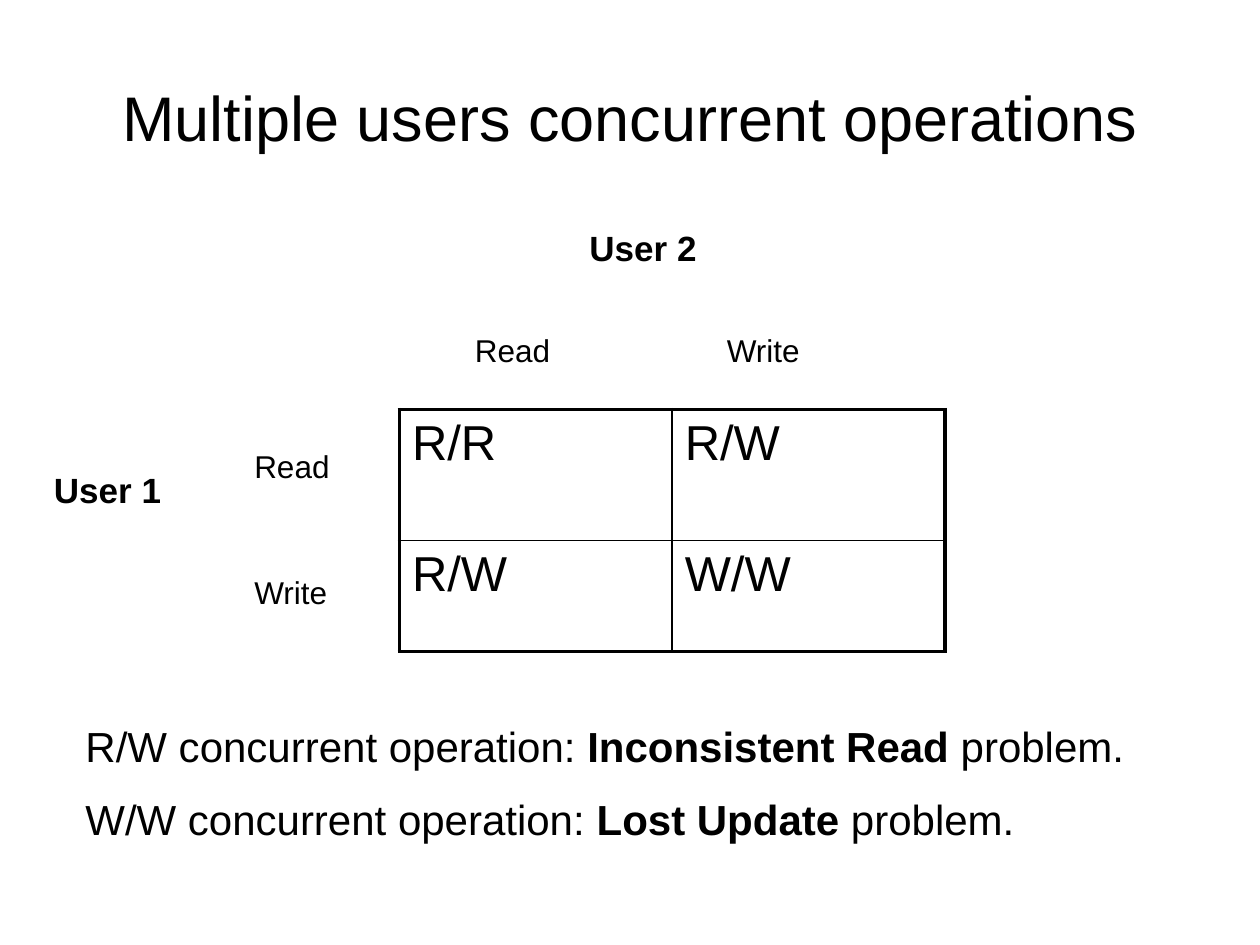
from lxml import etree
from pptx import Presentation
from pptx.dml.color import RGBColor
from pptx.enum.text import MSO_ANCHOR, MSO_AUTO_SIZE, PP_ALIGN
from pptx.oxml.ns import qn
from pptx.util import Inches, Pt

MIDDLE = MSO_ANCHOR.MIDDLE
GROW = MSO_AUTO_SIZE.SHAPE_TO_FIT_TEXT
CENTER = PP_ALIGN.CENTER
LEFT = PP_ALIGN.LEFT
COLORS = {"ink": "000000"}
FONT = "Arial"
THIN, THICK = 1, 2.25


def style(run, size, bold=False):
    """Set the font, size, weight and colour of a run."""
    font = run.font
    font.name = FONT
    font.size = Pt(size)
    font.bold = bold
    font.color.rgb = RGBColor.from_string(COLORS["ink"])


def add_title(slide, box, text):
    """Place the title placeholder in the box."""
    title = slide.shapes.title
    title.left, title.top, title.width, title.height = map(Inches, box)
    frame = title.text_frame
    frame.text = text
    frame.vertical_anchor = MIDDLE
    para = frame.paragraphs[0]
    para.alignment = CENTER
    style(para.runs[0], 36)


def add_text(slide, box, lines, size, gap=0):
    """Place lines made of (text, bold) parts in the box."""
    frame = slide.shapes.add_textbox(*map(Inches, box)).text_frame
    frame.word_wrap = True
    frame.auto_size = GROW
    for i, parts in enumerate(lines):
        para = frame.add_paragraph() if i else frame.paragraphs[0]
        para.alignment = LEFT
        if i:
            para.space_before = Pt(gap)
        for text, bold in parts:
            run = para.add_run()
            run.text = text
            style(run, size, bold)


def add_edges(cell, widths):
    """Draw the left, right, top and bottom edges of a cell."""
    props = cell._tc.get_or_add_tcPr()
    for i, (side, width) in enumerate(zip("LRTB", widths)):
        line = etree.Element(qn(f"a:ln{side}"), w=str(Pt(width)))
        fill = etree.SubElement(line, qn("a:solidFill"))
        etree.SubElement(fill, qn("a:srgbClr"), val=COLORS["ink"])
        props.insert(i, line)


def add_matrix(slide, box, rows, heights):
    """Place the table of operation pairs in the box."""
    last_row, last_col = len(rows) - 1, len(rows[0]) - 1
    table = slide.shapes.add_table(len(rows), len(rows[0]), *map(Inches, box)).table
    table.first_row = table.horz_banding = False
    for r, row in enumerate(rows):
        table.rows[r].height = Inches(heights[r])
        for c, text in enumerate(row):
            cell = table.cell(r, c)
            cell.text = text
            style(cell.text_frame.paragraphs[0].runs[0], 28)
            cell.fill.background()
            outer = (c == 0, c == last_col, r == 0, r == last_row)
            add_edges(cell, [THICK if out else THIN for out in outer])


def add_axis(slide, head, name, spots):
    """Place a user's bold heading and the labels of its operations."""
    add_text(slide, head, [[(name, True)]], 20)
    for text, spot in zip(("Read", "Write"), spots):
        add_text(slide, spot, [[(text, False)]], 18)


def main():
    """Build and save the slide."""
    deck = Presentation()
    deck.slide_width, deck.slide_height = Inches(10), Inches(7.5)
    slide = deck.slides.add_slide(deck.slide_layouts[5])
    add_title(slide, (0.5, 0.3, 9, 1.25), "Multiple users concurrent operations")
    add_matrix(slide, (3.17, 3.25, 4.33, 1.92),
               [("R/R", "R/W"), ("R/W", "W/W")], (1.04, 0.88))
    add_axis(slide, (4.58, 1.75, 1.33, 0.44), "User 2",
             [(x, 2.58, 1.58, 0.4) for x in (3.67, 5.67)])
    add_axis(slide, (0.33, 3.67, 1.17, 0.44), "User 1",
             [(1.92, y, 1.17, 0.4) for y in (3.5, 4.5)])
    issues = (("R/W", "Inconsistent Read"), ("W/W", "Lost Update"))
    add_text(slide, (0.58, 5.67, 8.92, 1.11),
             [[(f"{pair} concurrent operation: ", False), (issue, True),
               (" problem.", False)] for pair, issue in issues], 24, gap=13)
    deck.save("out.pptx")


if __name__ == "__main__":
    main()
